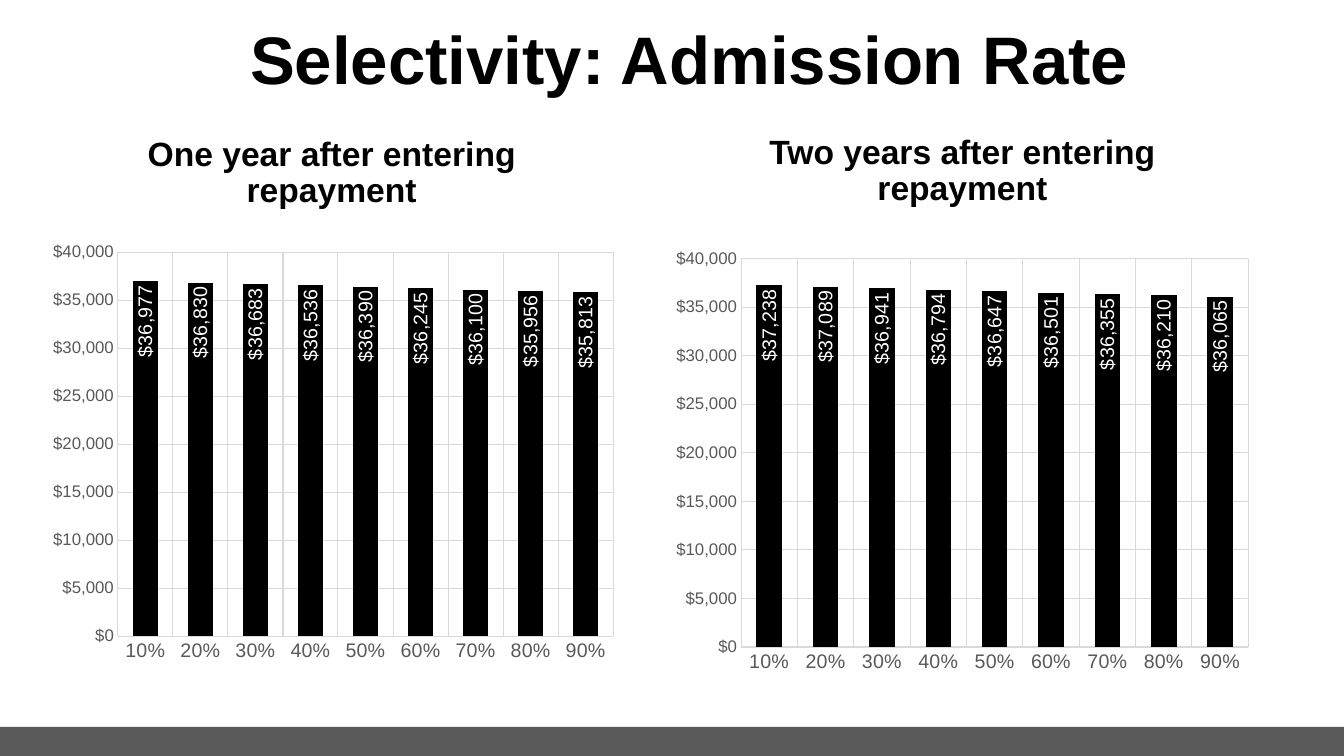
from pptx import Presentation
from pptx.chart.data import CategoryChartData
from pptx.dml.color import RGBColor
from pptx.enum.chart import XL_CHART_TYPE, XL_LABEL_POSITION, XL_TICK_MARK
from pptx.enum.shapes import MSO_SHAPE
from pptx.enum.text import MSO_ANCHOR, MSO_AUTO_SIZE, PP_ALIGN
from pptx.oxml import parse_xml
from pptx.oxml.ns import nsdecls, qn
from pptx.util import Inches, Pt

BLACK = RGBColor(0x00, 0x00, 0x00)
WHITE = RGBColor(0xFF, 0xFF, 0xFF)
DARK_GRAY = RGBColor(0x59, 0x59, 0x59)
LIGHT_GRAY = RGBColor(0xD9, 0xD9, 0xD9)
DOLLARS = '"$"#,##0'
ADMISSION_RATES = [f"{rate}%" for rate in range(10, 100, 10)]

PANELS = [
    {
        "heading": "One year after entering repayment",
        "heading_box": (0.61, 1.25, 5.36, 0.94),
        "chart_box": (0.34, 2.37, 5.92, 4.38),
        "plot_area": (0.14, 0.03, 0.83, 0.87),
        "amounts": (36977, 36830, 36683, 36536, 36390, 36245, 36100, 35956, 35813),
    },
    {
        "heading": "Two years after entering repayment",
        "heading_box": (6.67, 1.28, 5.75, 0.85),
        "chart_box": (6.58, 2.39, 5.92, 4.38),
        "plot_area": (0.13, 0.04, 0.85, 0.88),
        "amounts": (37238, 37089, 36941, 36794, 36647, 36501, 36355, 36210, 36065),
    },
]


def inches(box):
    return [Inches(length) for length in box]


class SlideBuilder:
    font_name = "Arial"

    def __init__(self, presentation):
        self.slide = presentation.slides.add_slide(presentation.slide_layouts[5])

    def style_font(self, font, size, color, bold=False):
        font.name = self.font_name
        font.size = Pt(size)
        font.bold = bold
        font.color.rgb = color

    def add_text(self, shape, text, size):
        frame = shape.text_frame
        frame.word_wrap = True
        frame.auto_size = MSO_AUTO_SIZE.NONE
        frame.vertical_anchor = MSO_ANCHOR.MIDDLE
        paragraph = frame.paragraphs[0]
        paragraph.alignment = PP_ALIGN.CENTER
        paragraph.line_spacing = 0.9
        run = paragraph.add_run()
        run.text = text
        self.style_font(run.font, size, BLACK, bold=True)

    def title(self, text, box):
        shape = self.slide.shapes.title
        shape.left, shape.top, shape.width, shape.height = inches(box)
        self.add_text(shape, text, 48)

    def heading(self, text, box):
        self.add_text(self.slide.shapes.add_textbox(*inches(box)), text, 24)

    def bar(self, box, color):
        shape = self.slide.shapes.add_shape(MSO_SHAPE.RECTANGLE, *inches(box))
        shape.shadow.inherit = False
        shape.fill.solid()
        shape.fill.fore_color.rgb = color
        shape.line.fill.background()

    def style_axis(self, axis, size):
        axis.major_tick_mark = XL_TICK_MARK.NONE
        axis.minor_tick_mark = XL_TICK_MARK.NONE
        axis.has_major_gridlines = True
        gridline = axis.major_gridlines.format.line
        gridline.color.rgb = LIGHT_GRAY
        gridline.width = Pt(0.75)
        self.style_font(axis.tick_labels.font, size, DARK_GRAY)

    def place_plot_area(self, chart, box):
        plot_area = next(chart.element.iter(qn("c:plotArea")))
        for layout in plot_area.findall(qn("c:layout")):
            plot_area.remove(layout)
        lengths = "".join(
            f'<c:{name} val="{value}"/>' for name, value in zip("xywh", box)
        )
        plot_area.insert(0, parse_xml(
            f'<c:layout {nsdecls("c")}><c:manualLayout>'
            '<c:layoutTarget val="inner"/>'
            '<c:xMode val="edge"/><c:yMode val="edge"/>'
            f"{lengths}</c:manualLayout></c:layout>"
        ))

    def label_columns(self, chart, plot):
        plot.has_data_labels = True
        labels = plot.data_labels
        labels.show_value = True
        labels.position = XL_LABEL_POSITION.INSIDE_END
        labels.number_format = DOLLARS
        labels.number_format_is_linked = False
        self.style_font(labels.font, 14, WHITE)
        label_element = next(chart.element.iter(qn("c:dLbls")))
        body = next(label_element.iter(qn("a:bodyPr")))
        body.set("rot", "-5400000")
        body.set("vert", "horz")

    def column_chart(self, amounts, box, plot_box):
        data = CategoryChartData(number_format=DOLLARS)
        data.categories = ADMISSION_RATES
        data.add_series("Series 1", amounts)
        chart = self.slide.shapes.add_chart(
            XL_CHART_TYPE.COLUMN_CLUSTERED, *inches(box), data
        ).chart
        chart.has_title = False
        chart.has_legend = False
        self.style_font(chart.font, 10, BLACK)

        category_axis, value_axis = chart.category_axis, chart.value_axis
        self.style_axis(category_axis, 14)
        self.style_axis(value_axis, 12)
        category_axis.format.line.color.rgb = LIGHT_GRAY
        category_axis.format.line.width = Pt(0.75)
        value_axis.format.line.fill.background()
        value_axis.minimum_scale = 0
        value_axis.maximum_scale = 40000
        value_axis.major_unit = 5000
        value_axis.tick_labels.number_format = DOLLARS
        value_axis.tick_labels.number_format_is_linked = False

        plot = chart.plots[0]
        plot.vary_by_categories = False
        plot.gap_width = 121
        plot.overlap = -27
        fill = plot.series[0].format.fill
        fill.solid()
        fill.fore_color.rgb = BLACK
        self.label_columns(chart, plot)
        self.place_plot_area(chart, plot_box)


def main():
    presentation = Presentation()
    presentation.slide_width = Inches(13.33)
    presentation.slide_height = Inches(7.5)
    builder = SlideBuilder(presentation)
    builder.bar((0, 7.21, 13.33, 0.29), DARK_GRAY)
    builder.title("Selectivity: Admission Rate", (0.61, 0.2, 12.46, 0.85))
    for panel in PANELS:
        builder.heading(panel["heading"], panel["heading_box"])
        builder.column_chart(panel["amounts"], panel["chart_box"], panel["plot_area"])
    presentation.save("out.pptx")


if __name__ == "__main__":
    main()
